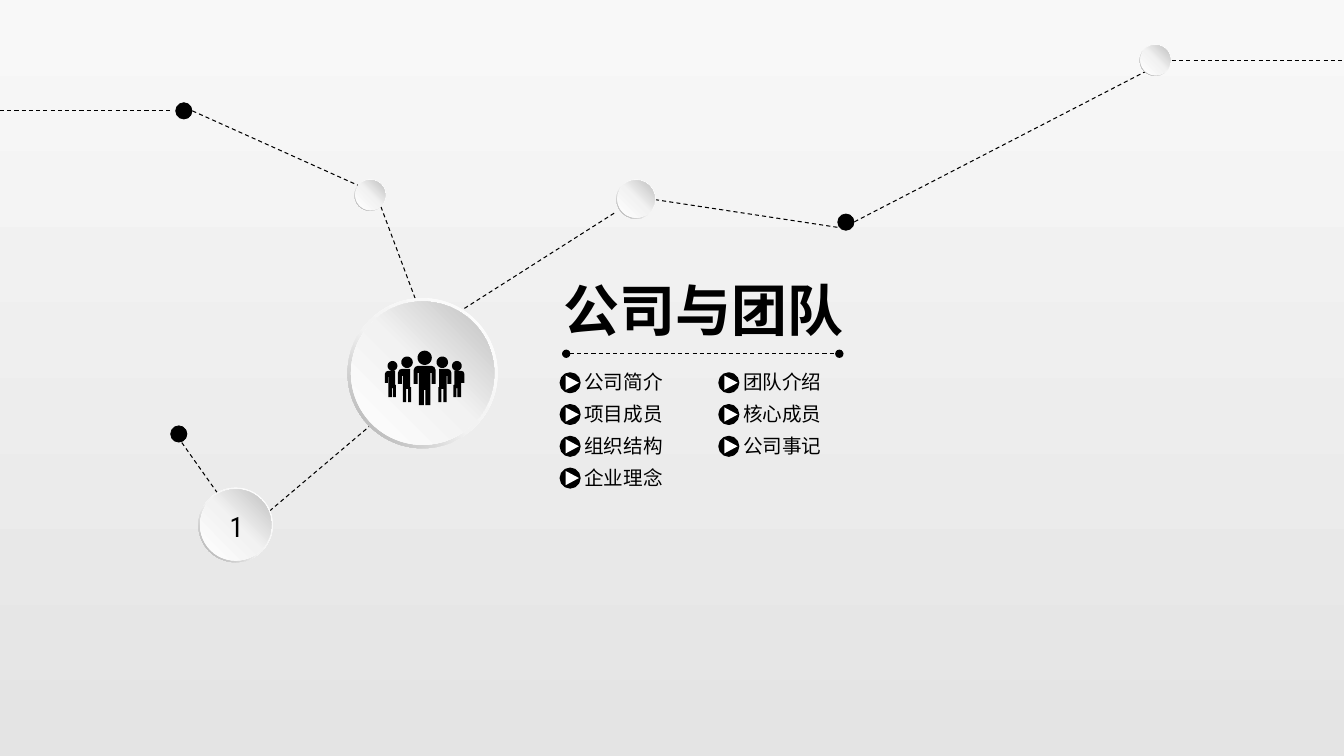
import copy
import math
from dataclasses import dataclass

import pptx
import pptx.dml.color
import pptx.enum.shapes
import pptx.enum.text
import pptx.oxml
import pptx.oxml.ns
import pptx.util
from pptx.util import Pt

SHAPES = pptx.enum.shapes.MSO_SHAPE
ALIGN = pptx.enum.text.PP_ALIGN
ANCHOR = pptx.enum.text.MSO_ANCHOR
qn = pptx.oxml.ns.qn
BLACK = "000000"
CHINESE = "Noto Sans CJK SC"
RING_STOPS = [(0, "FFFFFF"), (0.55, "F2F2F2"), (1, "A6A6A6")]
CORE_STOPS = [(0, "FFFFFF"), (0.51, "F2F2F2"), (1, "BFBFBF")]


@dataclass
class Node:
    x: float
    y: float
    size: float
    dark: bool = False


@dataclass
class Link:
    x1: float
    y1: float
    x2: float
    y2: float
    dots: bool = False


@dataclass
class Label:
    text: str
    x: float
    y: float
    width: float
    height: float
    size: float
    font: str = CHINESE
    bold: bool = False
    wrap: bool = True
    inset: bool = False
    align: ALIGN = ALIGN.LEFT
    anchor: ANCHOR = ANCHOR.TOP


NODES = [
    Node(131.4, 79.2, 12.2, True), Node(264.6, 139.4, 22.4),
    Node(127.8, 310, 12.2, True), Node(302, 266.6, 107.2),
    Node(168.4, 375, 53.3), Node(454.5, 142.2, 28),
    Node(604.5, 158.7, 12.2, True), Node(825.6, 43, 22.4),
]
LINKS = [
    Link(0, 79.2, 123.1, 79.2), Link(137.5, 79.2, 259.2, 133.9),
    Link(272.2, 147.6, 298.8, 218.9), Link(265.7, 303.1, 185, 371.5),
    Link(158.4, 356.4, 125.3, 309.6), Link(404.6, 252.7, 599.8, 252.7, True),
    Link(331.9, 220.3, 440.6, 151.2), Link(468, 142.6, 600.5, 162.7),
    Link(610.6, 158.4, 818.6, 51.1), Link(832.3, 43.2, 960.4, 43.2),
]
TOPICS = [
    ["公司简介", "项目成员", "组织结构", "企业理念"],
    ["团队介绍", "核心成员", "公司事记"],
]
HEADS = [(0, 5.1, 5.1), (12.6, 8.3, 4.1), (-12.6, 8.3, 4.1), (23, 10.9, 3.5), (-23, 10.9, 3.5)]
CENTRE_HALF = [
    (0, 10.9), (5, 10.9), (6.9, 11.7), (7.8, 13.7), (7.8, 23.8), (5, 23.8), (5, 15.9),
    (4.1, 15.9), (4.1, 38.9), (0.5, 38.9), (0.5, 28.1), (0, 28.1),
]
INNER_BODY = [
    (9.7, 26), (9.7, 36.8), (11.9, 36.8), (11.9, 27.4), (13.3, 27.4), (13.3, 36.8),
    (15.6, 36.8), (15.6, 18), (16.2, 18), (16.2, 23.8), (19.1, 23.8), (19.1, 15.8),
    (18.2, 13.7), (16.2, 13), (10.4, 13), (10.4, 26),
]
OUTER_BODY = [
    (20.5, 24.5), (20.5, 33.2), (22.7, 33.2), (22.7, 26.7), (23.4, 26.7), (23.4, 33.2),
    (26, 33.2), (26, 18.8), (26.3, 18.8), (26.3, 23.1), (28.4, 23.1), (28.4, 16.6),
    (27.7, 15), (26.3, 14.5), (21.2, 14.5), (21.2, 24.5),
]


def colour(value: str) -> pptx.dml.color.RGBColor:
    return pptx.dml.color.RGBColor.from_string(value)


def paint_gradient(fill, element, stops: list, angle: float) -> None:
    fill.gradient()
    stop_list = next(element.iter(qn("a:gsLst")))
    while len(stop_list) < len(stops):
        stop_list.append(copy.deepcopy(stop_list[-1]))
    for stop, (position, value) in zip(fill.gradient_stops, stops):
        stop.position = position
        stop.color.rgb = colour(value)
    fill.gradient_angle = (360 - angle) % 360


def paint_solid(shape, value: str) -> None:
    shape.shadow.inherit = False
    shape.fill.solid()
    shape.fill.fore_color.rgb = colour(value)
    shape.line.fill.background()


def add_centred(page, kind, x: float, y: float, width: float, height: float, value: str):
    shape = page.shapes.add_shape(
        kind, Pt(x - width / 2), Pt(y - height / 2), Pt(width), Pt(height))
    paint_solid(shape, value)
    return shape


def draw_node(page, node: Node) -> None:
    ring = add_centred(page, SHAPES.DONUT, node.x, node.y, node.size, node.size, BLACK)
    ring.adjustments[0] = 0.049
    inside = node.size * 0.955
    core = add_centred(page, SHAPES.OVAL, node.x, node.y, inside, inside, BLACK)
    if not node.dark:
        paint_gradient(ring.fill, ring._element, RING_STOPS, 135)
        paint_gradient(core.fill, core._element, CORE_STOPS, 315)


def draw_link(page, link: Link) -> None:
    line = page.shapes.add_connector(
        pptx.enum.shapes.MSO_CONNECTOR.STRAIGHT,
        Pt(link.x1), Pt(link.y1), Pt(link.x2), Pt(link.y2))
    line.line.color.rgb = colour(BLACK)
    line.line.width = Pt(0.75)
    line.line.dash_style = pptx.enum.dml.MSO_LINE.DASH
    properties = line._element.spPr
    if link.dots:
        outline = properties.find(qn("a:ln"))
        for end in ("a:headEnd", "a:tailEnd"):
            tip = pptx.oxml.parse_xml(f'<{end} {pptx.oxml.ns.nsdecls("a")} type="oval"/>')
            outline.append(tip)
    properties.append(pptx.oxml.parse_xml(f'<a:effectLst {pptx.oxml.ns.nsdecls("a")}/>'))


def draw_label(page, label: Label) -> None:
    box = page.shapes.add_textbox(
        Pt(label.x), Pt(label.y), Pt(label.width), Pt(label.height))
    frame = box.text_frame
    frame.word_wrap = label.wrap
    frame.vertical_anchor = label.anchor
    if not label.inset:
        frame.margin_left = frame.margin_right = frame.margin_top = frame.margin_bottom = 0
    para = frame.paragraphs[0]
    para.text = label.text
    para.alignment = label.align
    para.font.size = Pt(label.size)
    para.font.bold = label.bold
    para.font.color.rgb = colour(BLACK)
    para.font.name = label.font
    latin = next(para._p.iter(qn("a:latin")))
    latin.addnext(pptx.oxml.parse_xml(
        f'<a:ea {pptx.oxml.ns.nsdecls("a")} typeface="{label.font}"/>'))


def mirror(points: list) -> list:
    return [(-x, y) for x, y in reversed(points)]


def circle(x: float, y: float, radius: float) -> list:
    angles = [math.tau * step / 24 for step in range(24)]
    return [(x + radius * math.cos(a), y + radius * math.sin(a)) for a in angles]


def draw_team(page, left: float, top: float) -> None:
    outlines = [CENTRE_HALF + mirror(CENTRE_HALF)]
    for body in (INNER_BODY, OUTER_BODY):
        outlines += [body, mirror(body)]
    outlines += [circle(*head) for head in HEADS]
    placed = [[(Pt(left + x), Pt(top + y)) for x, y in outline] for outline in outlines]
    builder = page.shapes.build_freeform(*placed[0][0])
    for outline in placed:
        builder.move_to(*outline[0])
        builder.add_line_segments(outline[1:], close=True)
    paint_solid(builder.convert_to_shape(), BLACK)


def draw_topic(page, text: str, x: float, y: float) -> None:
    draw_label(page, Label(text, x + 10.2, y - 9, 96.5, 17.3, 14))
    disc = add_centred(page, SHAPES.OVAL, x, y, 13, 13, BLACK)
    disc.line.color.rgb = colour(BLACK)
    disc.line.width = Pt(2)
    arrow = add_centred(page, SHAPES.ISOSCELES_TRIANGLE, x + 1.6, y, 10.1, 9.4, "FFFFFF")
    arrow.rotation = 90


def main() -> None:
    deck = pptx.Presentation()
    deck.slide_width, deck.slide_height = Pt(960.4), Pt(540)
    page = deck.slides.add_slide(deck.slide_layouts[6])
    paint_gradient(page.background.fill, page._element, [(0, "F8F8F8"), (1, "E4E4E4")], 90)
    for link in LINKS:
        draw_link(page, link)
    for node in NODES:
        draw_node(page, node)
    draw_team(page, 303.5, 250.5)
    draw_label(page, Label("1", 157, 360.7, 22.3, 31.7, 20, "Roboto Condensed",
                           wrap=False, inset=True))
    draw_label(page, Label("公司与团队", 389.5, 202.3, 226.8, 37.4, 40, bold=True, inset=True,
                           align=ALIGN.CENTER, anchor=ANCHOR.MIDDLE))
    for column, topics in enumerate(TOPICS):
        for row, topic in enumerate(topics):
            draw_topic(page, topic, 407.4 + 113.4 * column, 273.4 + 22.7 * row)
    deck.save("out.pptx")


if __name__ == "__main__":
    main()
